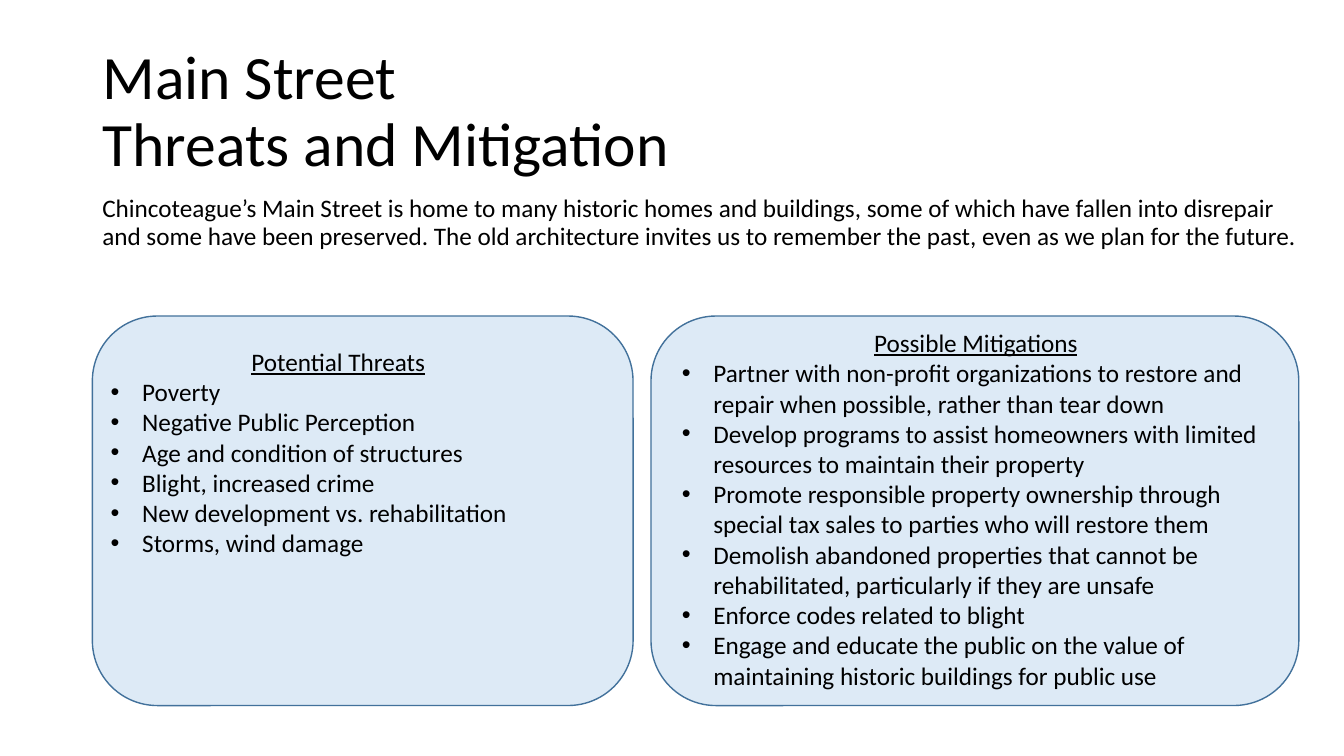
from dataclasses import dataclass

from lxml.etree import SubElement
from pptx import Presentation
from pptx.dml.color import RGBColor
from pptx.enum.shapes import MSO_SHAPE
from pptx.enum.text import MSO_ANCHOR, MSO_AUTO_SIZE, PP_ALIGN
from pptx.oxml.ns import qn
from pptx.util import Pt

PX = 9525  # EMU in one px, 96 px to the inch


@dataclass(frozen=True)
class Theme:
    font: str = "Calibri"
    ink: str = "000000"
    card: str = "DDEAF6"
    edge: str = "42719B"
    head: int = 44
    body: int = 18


theme = Theme()


def add_run(para, text, size, under=None):
    run = para.add_run()
    run.text = text
    run.font.name = theme.font
    run.font.size = Pt(size)
    run.font.color.rgb = RGBColor.from_string(theme.ink)
    run.font.underline = under


def add_box(slide, *rect):
    """Add a wrapping text box, rect in px, and return its text frame."""
    frame = slide.shapes.add_textbox(*(v * PX for v in rect)).text_frame
    frame.word_wrap = True
    return frame


deck = Presentation()
deck.slide_width, deck.slide_height = 1280 * PX, 720 * PX
slide = deck.slides.add_slide(deck.slide_layouts[5])

# Title
title = slide.shapes.title
title.left, title.top = 88 * PX, 38 * PX
title.width, title.height = 1104 * PX, 139 * PX
frame = title.text_frame
frame.auto_size = MSO_AUTO_SIZE.NONE
frame.vertical_anchor = MSO_ANCHOR.MIDDLE
para = frame.paragraphs[0]
para.alignment = PP_ALIGN.LEFT
para.line_spacing = 0.9
add_run(para, "Main Street", theme.head)
para.add_line_break()
add_run(para, "Threats and Mitigation", theme.head)

# Introduction
para = add_box(slide, 88, 182, 1168, 116).paragraphs[0]
para.line_spacing = 0.9
add_run(
    para,
    "Chincoteague’s Main Street is home to many historic homes and buildings, "
    "some of which have fallen into disrepair and some have been preserved. "
    "The old architecture invites us to remember the past, even as we plan for the future.",
    theme.body,
)

# Cards: left and width, text rect, heading, heading indent, points
cards = [
    (88, 515, (96, 325, 512, 300), "Potential Threats", 134, [
        "Poverty",
        "Negative Public Perception",
        "Age and condition of structures",
        "Blight, increased crime",
        "New development vs. rehabilitation",
        "Storms, wind damage",
    ]),
    (620, 617, (640, 307, 589, 403), "Possible Mitigations", 183, [
        "Partner with non-profit organizations to restore and repair when possible, "
        "rather than tear down",
        "Develop programs to assist homeowners with limited resources to maintain their property",
        "Promote responsible property ownership through special tax sales to parties "
        "who will restore them",
        "Demolish abandoned properties that cannot be rehabilitated, particularly if they are unsafe",
        "Enforce codes related to blight",
        "Engage and educate the public on the value of maintaining historic buildings for public use",
    ]),
]
for left, width, rect, head, indent, points in cards:
    card = slide.shapes.add_shape(
        MSO_SHAPE.ROUNDED_RECTANGLE, left * PX, 301 * PX, width * PX, 371 * PX
    )
    card.shadow.inherit = False
    card.fill.solid()
    card.fill.fore_color.rgb = RGBColor.from_string(theme.card)
    card.line.color.rgb = RGBColor.from_string(theme.edge)
    card.line.width = Pt(1)

    frame = add_box(slide, *rect)
    para = frame.paragraphs[0]
    para._p.get_or_add_pPr().set("marL", str(indent * PX))
    add_run(para, head, theme.body, True)
    for point in points:
        para = frame.add_paragraph()
        props = para._p.get_or_add_pPr()
        props.set("marL", str(30 * PX))
        props.set("indent", str(-30 * PX))
        tint = SubElement(props, qn("a:buClr"))
        SubElement(tint, qn("a:srgbClr"), val=theme.ink)
        SubElement(props, qn("a:buFont"), typeface="Arial")
        SubElement(props, qn("a:buChar"), char="•")
        add_run(para, point, theme.body)

deck.save("out.pptx")
